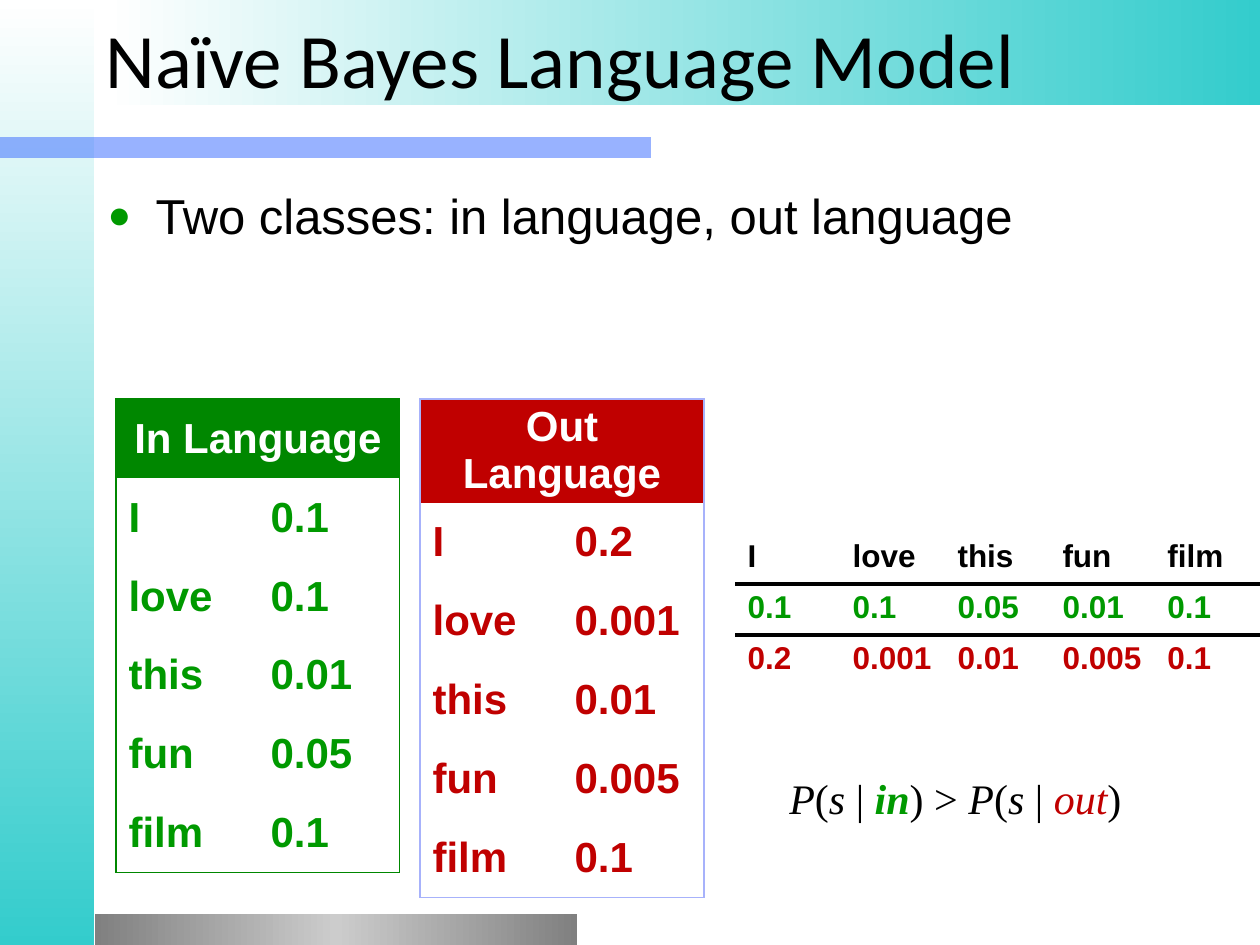
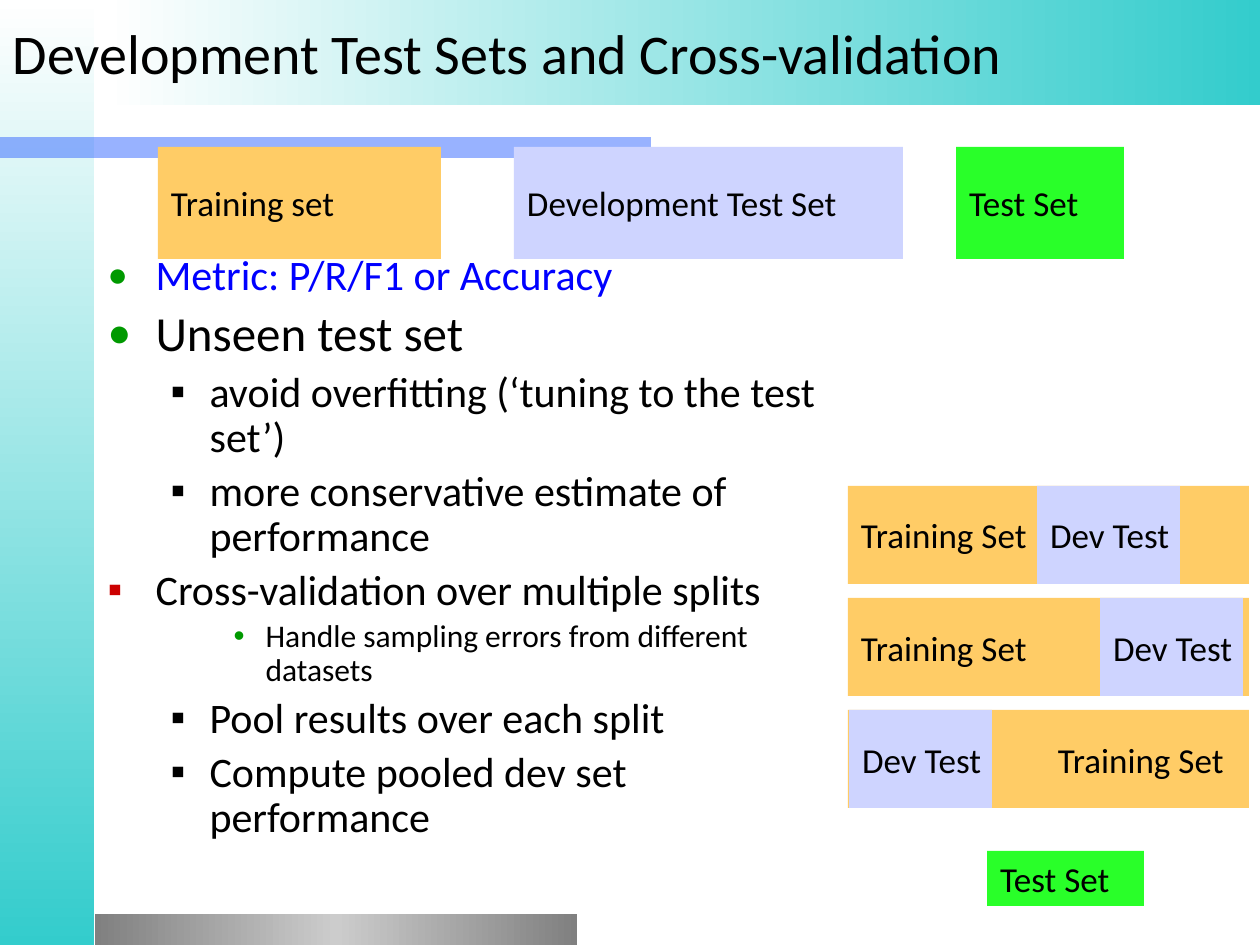
from lxml.etree import SubElement
from pptx import Presentation
from pptx.dml.color import RGBColor
from pptx.enum.shapes import MSO_SHAPE
from pptx.enum.text import MSO_ANCHOR, MSO_AUTO_SIZE, PP_ALIGN
from pptx.oxml.ns import qn
from pptx.util import Pt

BLACK, WHITE, BLUE = "000000", "FFFFFF", "0000FF"
GREEN, RED, TEAL = "009900", "C00000", "33CCCC"
SAND, LILAC, LIME = "FFCC66", "CED4FF", "29FF29"
SANS, BODY, SERIF = "Arial", "Calibri", "Times New Roman"
PLAIN = "{2D5ABB26-0587-4C30-8999-92F81FD0307C}"

BANDS = [
    ((0, 0, 94, 945), [WHITE, TEAL], 90),
    ((0, 137, 651, 21), ["3366FF"], 0),
    ((95, 914, 482, 31), ["808080", "CCCCCC", "808080"], 0),
    ((106, 0, 1154, 105), [WHITE, TEAL], 0),
]

WORDS = ["I", "love", "this", "fun", "film"]
MODELS = [
    ("In Language", ["0.1", "0.1", "0.01", "0.05", "0.1"], (116, 399),
     GREEN, "008700", "008700"),
    ("Out Language", ["0.2", "0.001", "0.01", "0.005", "0.1"], (420, 399),
     RED, RED, "A7B2FB"),
]
SCORES = [
    (WORDS, BLACK),
    (["0.1", "0.1", "0.05", "0.01", "0.1"], GREEN),
    (["0.2", "0.001", "0.01", "0.005", "0.1"], RED),
]
RULE = [
    ("P", {"italic": True}), ("(", {}), ("s", {"italic": True}), (" | ", {}),
    ("in", {"italic": True, "bold": True, "color": GREEN}), (") > ", {}),
    ("P", {"italic": True}), ("(", {}), ("s", {"italic": True}), (" | ", {}),
    ("out", {"italic": True, "color": RED}), (")", {}),
]

DOT = {"mark": "●", "left": 48, "hang": 48, "tint": GREEN, "pct": 80}
BOX = {"level": 1, "mark": "▪", "left": 102, "hang": 39}
CROSS = {"level": 1, "mark": "▪", "left": 48, "hang": 48, "tint": "CC0000"}
DEEP = {"level": 2, "mark": "•", "left": 158, "hang": 32, "tint": GREEN}
CLASSES = [("Two classes: in language, out language", DOT,
            {"size": 28, "font": SANS})]
NOTES = [
    ("Metric: P/R/F1 or Accuracy", DOT, {"color": BLUE}),
    ("Unseen test set", DOT, {"size": 28}),
    ("avoid overfitting (‘tuning to the test set’)", BOX, {}),
    ("more conservative estimate of performance", BOX, {}),
    ("Cross-validation over multiple splits", CROSS, {}),
    ("Handle sampling errors from different datasets", DEEP, {"size": 18}),
    ("Pool results over each split", BOX, {}),
    ("Compute pooled dev set performance", BOX, {}),
]
SETS = [
    ("Training set", (158, 147, 283, 112), SAND),
    ("Development Test Set", (514, 147, 389, 112), LILAC),
    ("Test Set", (956, 147, 168, 112), LIME),
    ("Test Set", (987, 851, 157, 55), LIME),
]
SPLITS = [(13, 189), (13, 252), (210, 1)]


def px(n):
    return round(n * 914400 / 126)


def rgb(code):
    return RGBColor.from_string(code)


def write(par, text, size=24, font=BODY, color=BLACK, bold=False, italic=False):
    run = par.add_run()
    run.text = text
    face = run.font
    face.size, face.name = Pt(size), font
    face.bold, face.italic = bold, italic
    face.color.rgb = rgb(color)


def node(parent, tag, **attrs):
    return SubElement(parent, qn("a:" + tag), attrs)


def place(shape, area):
    shape.left, shape.top, shape.width, shape.height = map(px, area)


def rect(slide, area, color=None):
    shape = slide.shapes.add_shape(MSO_SHAPE.RECTANGLE, *map(px, area))
    shape.shadow.inherit = False
    shape.line.fill.background()
    if color:
        shape.fill.solid()
        shape.fill.fore_color.rgb = rgb(color)
    return shape


def label(slide, text, area, color, inset=13):
    shape = rect(slide, area, color)
    frame = shape.text_frame
    frame.word_wrap = True
    frame.margin_left, frame.margin_right = px(inset), 0
    frame.vertical_anchor = MSO_ANCHOR.MIDDLE
    par = frame.paragraphs[0]
    par.alignment = PP_ALIGN.LEFT
    write(par, text, size=20)


def shade(shape, colors, angle):
    grad = shape.element.spPr.makeelement(qn("a:gradFill"), {"rotWithShape": "1"})
    stops = node(grad, "gsLst")
    for i, color in enumerate(colors):
        stop = node(stops, "gs", pos=str(100000 * i // (len(colors) - 1)))
        node(stop, "srgbClr", val=color)
    node(grad, "lin", ang=str(angle * 60000), scaled="0")
    shape.element.spPr.find(qn("a:prstGeom")).addnext(grad)


def dress(slide, master):
    tree = master.shapes.element
    for i, (area, colors, angle) in enumerate(BANDS):
        if len(colors) > 1:
            band = rect(slide, area)
            shade(band, colors, angle)
        else:
            band = rect(slide, area, colors[0])
            tone = next(band.element.spPr.iter(qn("a:srgbClr")))
            node(tone, "alpha", val="50000")
        band.element.nvSpPr.cNvPr.set("id", str(20 + i))
        tree.insert(2 + i, band.element)


def head(slide, text, area, size):
    title = slide.shapes.title
    place(title, area)
    frame = title.text_frame
    frame.auto_size = MSO_AUTO_SIZE.NONE
    frame.vertical_anchor = MSO_ANCHOR.MIDDLE
    par = frame.paragraphs[0]
    par.alignment = PP_ALIGN.LEFT
    write(par, text, size=size)


def bullet(par, mark, left, hang, level=0, tint=None, pct=100):
    par.level = level
    props = par._p.get_or_add_pPr()
    props.set("marL", str(px(left)))
    props.set("indent", str(-px(hang)))
    if tint:
        node(node(props, "buClr"), "srgbClr", val=tint)
    node(props, "buSzPct", val=str(pct * 1000))
    node(props, "buFont", typeface=SANS)
    node(props, "buChar", char=mark)


def items(slide, area, rows, gap):
    body = slide.placeholders[1]
    place(body, area)
    frame = body.text_frame
    frame.auto_size = MSO_AUTO_SIZE.NONE
    for i, (text, kind, form) in enumerate(rows):
        par = frame.add_paragraph() if i else frame.paragraphs[0]
        bullet(par, **kind)
        par.line_spacing = gap
        write(par, text, **form)


def grid(slide, rows, cols, spot, wide, high):
    area = (*spot, wide * cols, high * rows)
    table = slide.shapes.add_table(rows, cols, *map(px, area)).table
    table.first_row = table.horz_banding = False
    table._tbl.tblPr.find(qn("a:tableStyleId")).text = PLAIN
    return table


def cell_at(table, r, c, text, sides, edge, weight, fill=None, **form):
    cell = table.cell(r, c)
    props = cell._tc.get_or_add_tcPr()
    for side in sides:
        line = node(props, "ln" + side, w=str(Pt(weight)))
        node(node(line, "solidFill"), "srgbClr", val=edge)
    if fill:
        cell.fill.solid()
        cell.fill.fore_color.rgb = rgb(fill)
    else:
        cell.fill.background()
    if text:
        write(cell.text_frame.paragraphs[0], text, font=SANS, bold=True, **form)
    return cell


def model(slide, name, odds, spot, color, fill, edge):
    rows = [(name, "")] + list(zip(WORDS, odds))
    table = grid(slide, len(rows), 2, spot, 142, 79)
    for r, row in enumerate(rows):
        for c, text in enumerate(row):
            top = r == 0
            tests = {"L": c == 0, "R": c == 1 or top, "T": top,
                     "B": r == len(rows) - 1}
            sides = [side for side, on in tests.items() if on]
            cell = cell_at(table, r, c, text, sides, edge, 0.75,
                           fill=fill if top else None,
                           color=WHITE if top else color)
            cell.vertical_anchor = MSO_ANCHOR.MIDDLE
            cell.margin_top = cell.margin_bottom = px(5)
    table.cell(0, 0).merge(table.cell(0, 1))
    table.cell(0, 0).text_frame.paragraphs[0].alignment = PP_ALIGN.CENTER


def score(slide):
    table = grid(slide, len(SCORES), len(WORDS), (735, 533), 105, 51)
    for r, (row, color) in enumerate(SCORES):
        for c, text in enumerate(row):
            sides = ("T" if r else "") + ("B" if r < 2 else "")
            cell_at(table, r, c, text, sides, BLACK, 2.25, size=18, color=color)


def bayes(slide):
    head(slide, "Naïve Bayes Language Model", (93, 0, 1167, 116), 44)
    items(slide, (95, 179, 1071, 722), CLASSES, 1.0)
    for spec_row in MODELS:
        model(slide, *spec_row)
    score(slide)
    frame = slide.shapes.add_textbox(*map(px, (777, 766, 451, 64))).text_frame
    frame.word_wrap = True
    for text, form in RULE:
        write(frame.paragraphs[0], text, font=SERIF, **form)


def cross(slide):
    head(slide, "Development Test Sets and Cross-validation",
         (0, 0, 1260, 105), 32)
    items(slide, (95, 248, 766, 697), NOTES, 0.9)
    for text, area, color in SETS:
        label(slide, text, area, color)
    for i, (inset, shift) in enumerate(SPLITS):
        top = 486 + 112 * i
        label(slide, "Training Set", (848, top, 401, 98), SAND, inset)
        label(slide, "Dev Test", (848 + shift, top, 143, 98), LILAC)


def main():
    deck = Presentation()
    deck.slide_width, deck.slide_height = px(1260), px(945)
    layout = deck.slide_layouts[1]
    first, second = [deck.slides.add_slide(layout) for _ in range(2)]
    dress(first, deck.slide_master)
    bayes(first)
    cross(second)
    deck.save("out.pptx")


if __name__ == "__main__":
    main()
